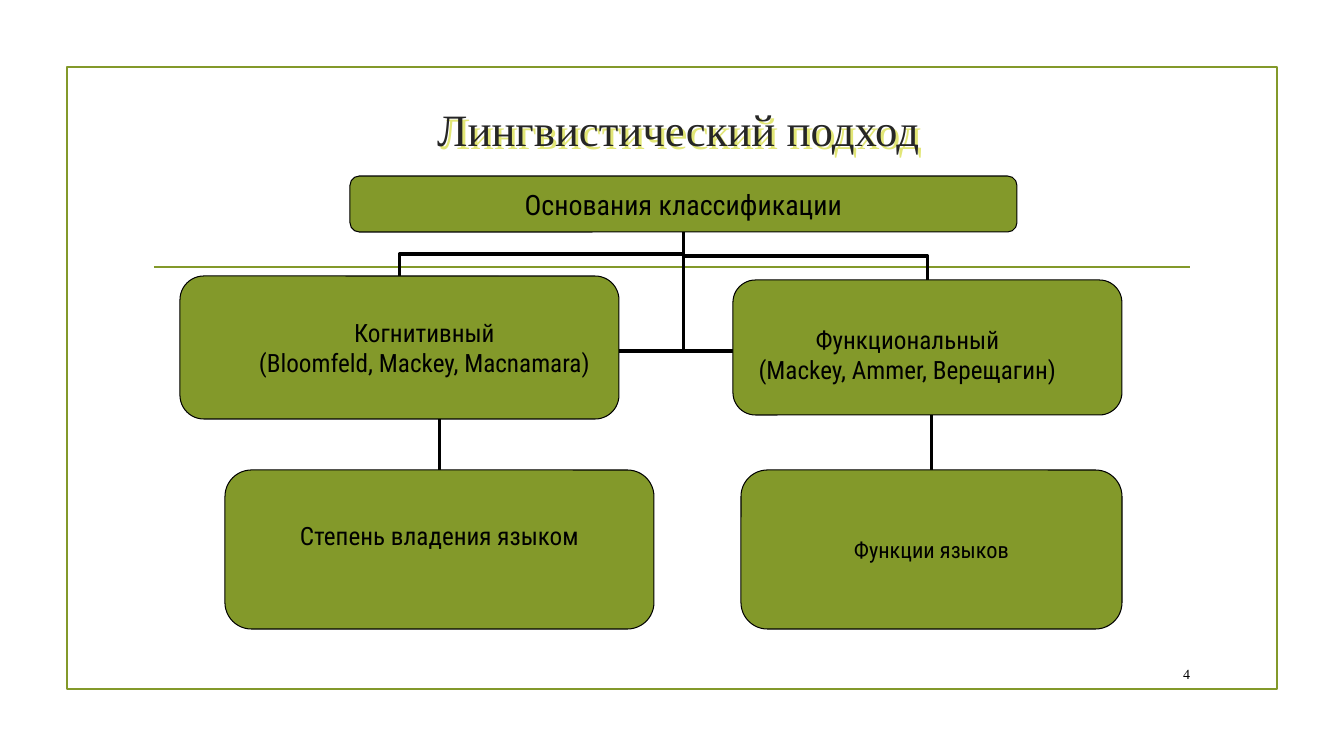
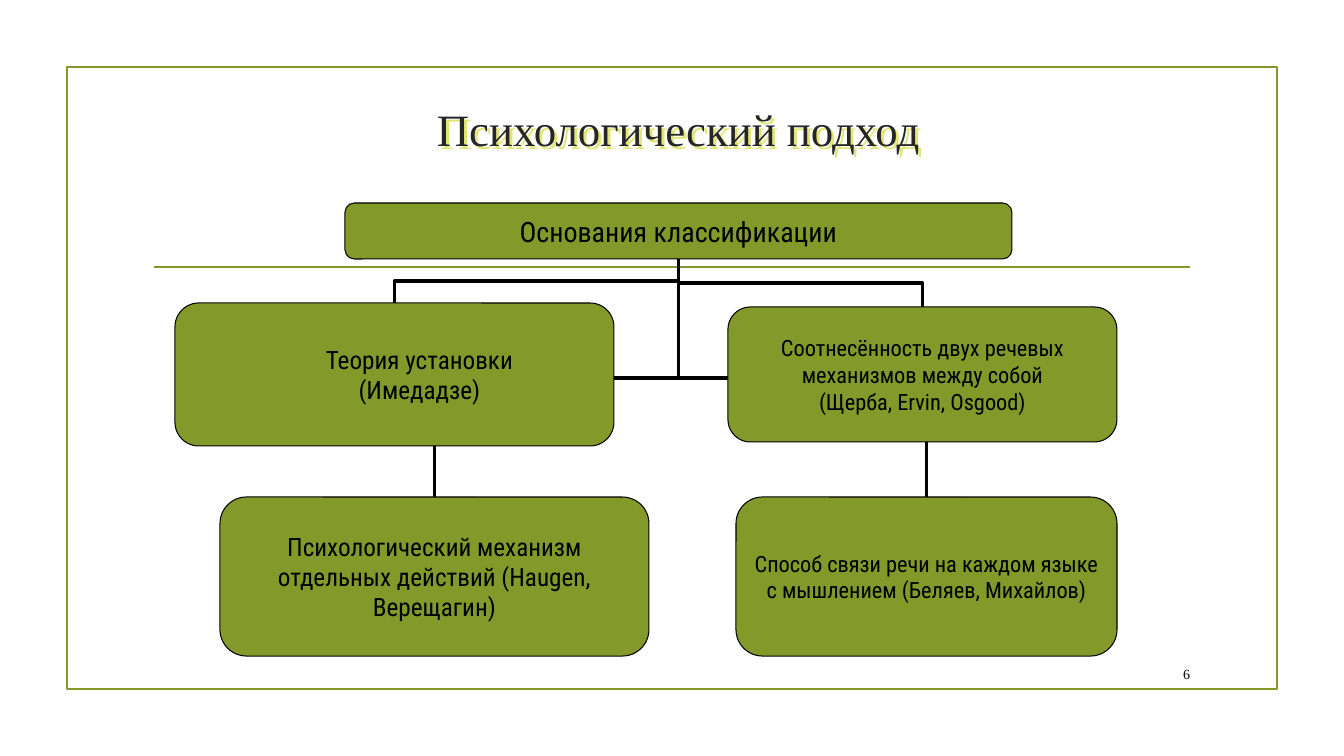
import pptx
import pptx.dml.color
import pptx.enum.shapes
import pptx.enum.text
import pptx.oxml
import pptx.oxml.ns
import pptx.util

PX = 914400 / 100.8
OLIVE, BLACK, TITLE_INK, TITLE_SHADOW = "83992A", "000000", "262626", "E2E676"
SERIF, SANS = "Times New Roman", "Roboto Condensed"
SHAPE = pptx.enum.shapes.MSO_SHAPE
CONNECTOR = pptx.enum.shapes.MSO_CONNECTOR
ALIGN = pptx.enum.text.PP_ALIGN


def px(n):
    return pptx.util.Emu(round(n * PX))


def rgb(value):
    return pptx.dml.color.RGBColor.from_string(value)


def add_effects(sp, inner=""):
    """Give a shape or connector its own effect list; empty means no shadow."""
    ns = pptx.oxml.ns.nsdecls("a")
    effects = pptx.oxml.parse_xml(f"<a:effectLst {ns}>{inner}</a:effectLst>")
    sp._element.spPr.append(effects)


class Deck:
    def __init__(self):
        self.prs = pptx.Presentation()
        self.prs.slide_width, self.prs.slide_height = px(1344), px(756)
        self.slide = None

    # Shared slide furniture: frame, rule, page number, title
    def new_slide(self, title, number):
        self.slide = self.prs.slides.add_slide(self.prs.slide_layouts[6])
        self.shape(SHAPE.RECTANGLE, (67, 67, 1210, 622), None, OLIVE, 1.25)
        self.line((154, 267), (1190, 267), OLIVE, 1.25)
        self.label((1141, 658, 59, 31), number, 10, BLACK, ALIGN.RIGHT)
        sp = self.label((225, 69, 907, 119), title, 32, TITLE_INK, ALIGN.CENTER)
        add_effects(sp, '<a:outerShdw dist="38100" dir="2700000" algn="tl" rotWithShape="0">'
                        f'<a:srgbClr val="{TITLE_SHADOW}"/></a:outerShdw>')

    def text(self, sp, lines, size, font, color, align):
        tf = sp.text_frame
        tf.word_wrap = True
        tf.vertical_anchor = pptx.enum.text.MSO_ANCHOR.MIDDLE
        for i, line in enumerate(lines):
            p = tf.add_paragraph() if i else tf.paragraphs[0]
            p.alignment = align
            r = p.add_run()
            r.text = line
            r.font.size, r.font.name = pptx.util.Pt(size), font
            r.font.color.rgb = rgb(color)

    def label(self, box, text, size, color, align):
        sp = self.slide.shapes.add_textbox(*map(px, box))
        self.text(sp, [text], size, SERIF, color, align)
        return sp

    def shape(self, kind, box, fill, line, width):
        sp = self.slide.shapes.add_shape(kind, *map(px, box))
        sp.shadow.inherit = False
        if fill:
            sp.fill.solid()
            sp.fill.fore_color.rgb = rgb(fill)
        else:
            sp.fill.background()
        sp.line.color.rgb = rgb(line)
        sp.line.width = pptx.util.Pt(width)
        return sp

    def node(self, box, lines, size, pad=(1, 1, 1, 1)):
        sp = self.shape(SHAPE.ROUNDED_RECTANGLE, box, OLIVE, BLACK, 0.75)
        tf = sp.text_frame
        tf.margin_left, tf.margin_top, tf.margin_right, tf.margin_bottom = map(px, pad)
        self.text(sp, lines, size, SANS, BLACK, ALIGN.CENTER)

    def line(self, start, end, color, width, kind=CONNECTOR.STRAIGHT):
        c = self.slide.shapes.add_connector(kind, *map(px, start + end))
        c.line.color.rgb = rgb(color)
        c.line.width = pptx.util.Pt(width)
        add_effects(c)
        return c

    def branch(self, child, root):
        """Elbow from a child's top to the root's bottom, vertical at both ends."""
        (x1, y1), (x2, y2) = child, root
        # A quarter turn swaps the width and height of the elbow's box
        cx, cy, w, h = (x1 + x2) / 2, (y1 + y2) / 2, abs(y1 - y2), abs(x1 - x2)
        side, turn = (-1, 270) if x1 > x2 else (1, 90)
        c = self.line((cx + side * w / 2, cy + h / 2), (cx - side * w / 2, cy - h / 2),
                      BLACK, 2.25, CONNECTOR.ELBOW)
        xfrm = c._element.spPr.find(pptx.oxml.ns.qn("a:xfrm"))
        xfrm.set("rot", str(turn * 60000))

    # Root box with two boxes below it and two more at the bottom
    def tree(self, dx, dy, contents):
        boxes = [(x + dx, y + dy, w, h) for x, y, w, h in TREE_BOXES]
        x, y, w, h = boxes[0]
        root = (x + w / 2, y + h)
        for x, y, w, h in reversed(boxes[1:]):
            self.branch((x + w / 2, y), root)
        for box, content in zip(boxes, contents):
            self.node(box, *content)


# Root, upper left, upper right, lower left, lower right
TREE_BOXES = [(350, 176, 667, 56), (180, 276, 439, 143), (733, 280, 389, 135),
              (225, 470, 429, 159), (741, 470, 381, 159)]
ROOT = (["Основания классификации"], 20)
INDENTED = (51, 1, 1, 1)

SLIDES = [
    ("Лингвистический подход", "4", (0, 0), [
        ROOT,
        (["Когнитивный", "(Bloomfeld, Mackey, Macnamara)"], 18, INDENTED),
        (["Функциональный", "(Mackey, Ammer, Верещагин)"], 18, (1, 15, 41, 1)),
        (["Степень владения языком"], 18, (1, 1, 1, 30)),
        (["Функции языков"], 16)]),
    ("Психологический подход", "6", (-5, 27), [
        ROOT,
        (["Теория установки", "(Имедадзе)"], 18, INDENTED),
        (["Соотнесённость двух речевых", "механизмов между собой",
          "(Щерба, Ervin, Osgood)"], 16),
        (["Психологический механизм", "отдельных действий (Haugen,", "Верещагин)"], 18),
        (["Способ связи речи на каждом языке", "с мышлением (Беляев, Михайлов)"], 16)]),
]


def main():
    deck = Deck()
    for title, number, shift, contents in SLIDES:
        deck.new_slide(title, number)
        deck.tree(*shift, contents)
    deck.prs.save("out.pptx")


if __name__ == "__main__":
    main()
